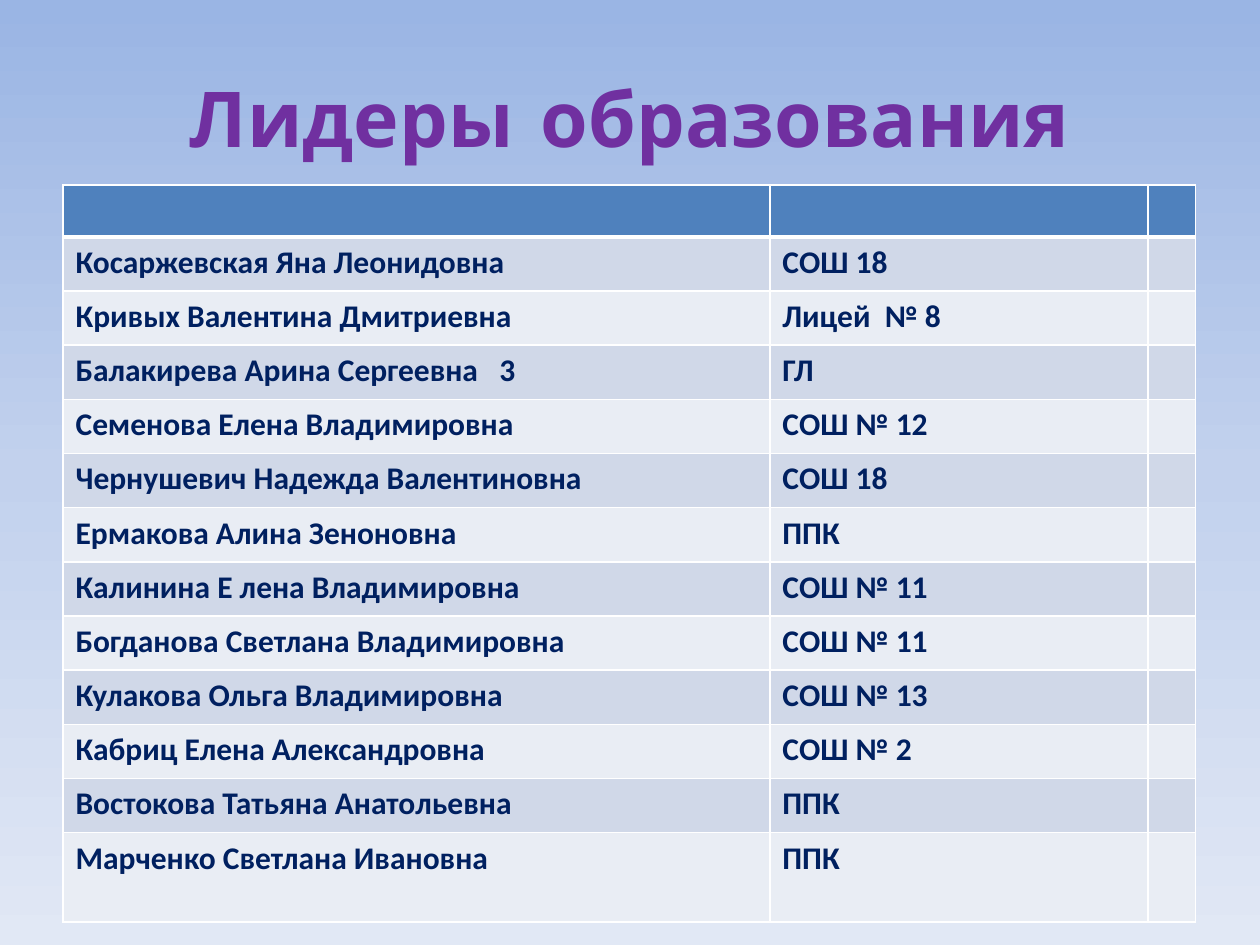
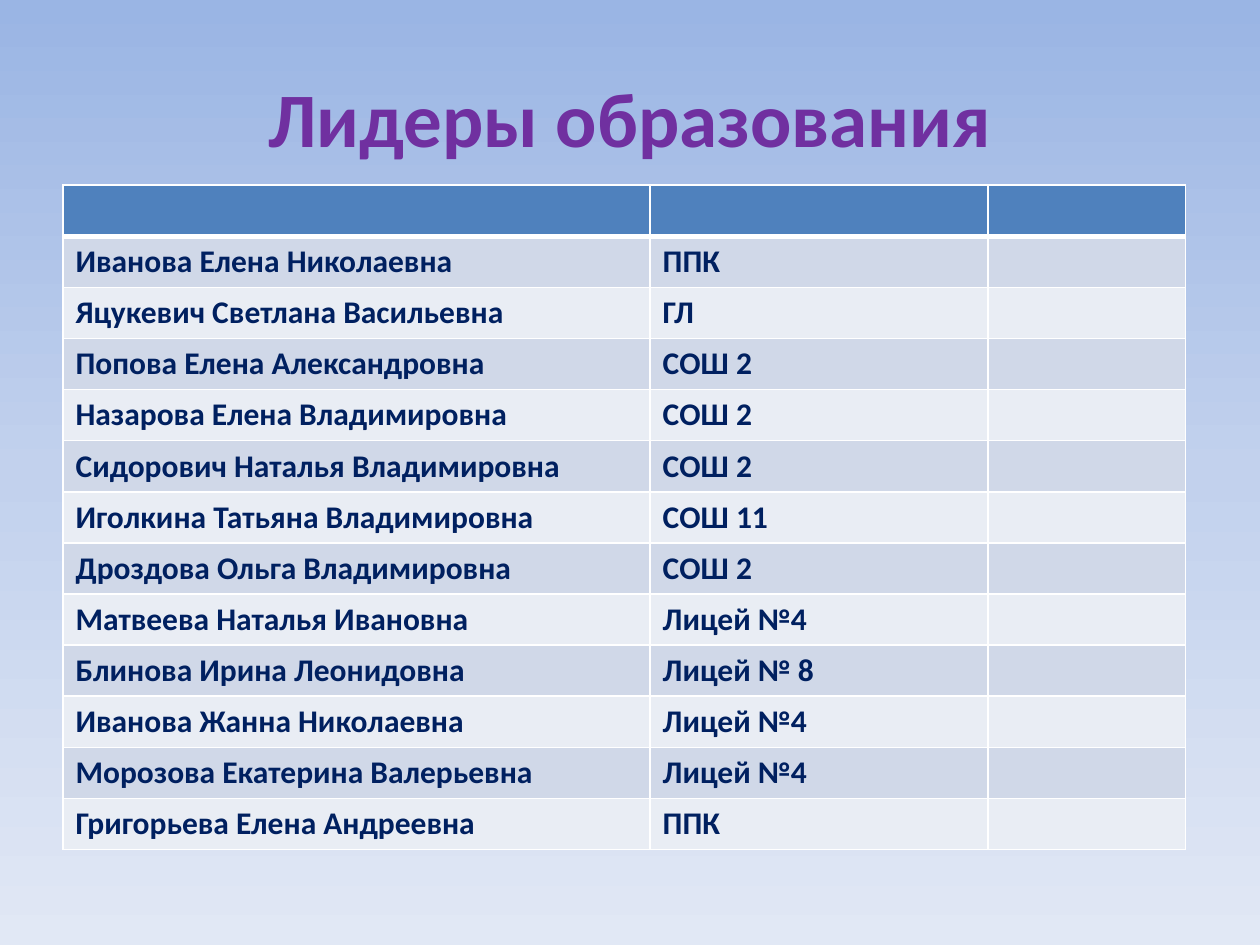
from copy import deepcopy

from lxml.etree import SubElement
from pptx import Presentation
from pptx.dml.color import RGBColor
from pptx.enum.text import MSO_ANCHOR, PP_ALIGN
from pptx.oxml.ns import qn
from pptx.util import Inches, Pt

COLORS = {
    "sky_top": "9AB5E4",
    "sky_middle": "C2D1ED",
    "sky_bottom": "E1E8F5",
    "title": "7030A0",
    "text": "002060",
    "header": "4F81BD",
    "odd_row": "D0D8E8",
    "even_row": "E9EDF4",
    "border": "FFFFFF",
}
TITLE = "Лидеры образования"
TITLE_BOX = (0.5, 0.3, 9, 1.25)
TABLE_LEFT, TABLE_TOP = 0.5, 1.47
TITLE_FORMAT = {"size": Pt(44), "bold": True}
CELL_FORMAT = {"size": Pt(18), "bold": True, "name": "Calibri"}

SLIDES = [
    {
        "title_font": "Comic Neue",
        "columns": [5.61, 3, 0.38],
        "heights": [0.41] + [0.43] * 11 + [0.71],
        "leaders": [
            ("Косаржевская Яна Леонидовна", "СОШ 18"),
            ("Кривых Валентина Дмитриевна", "Лицей  № 8"),
            ("Балакирева Арина Сергеевна   3", "ГЛ"),
            ("Семенова Елена Владимировна", "СОШ № 12"),
            ("Чернушевич Надежда Валентиновна", "СОШ 18"),
            ("Ермакова Алина Зеноновна", "ППК"),
            ("Калинина Е лена Владимировна", "СОШ № 11"),
            ("Богданова Светлана Владимировна", "СОШ № 11"),
            ("Кулакова Ольга Владимировна", "СОШ № 13"),
            ("Кабриц Елена Александровна", "СОШ № 2"),
            ("Востокова Татьяна Анатольевна", "ППК"),
            ("Марченко Светлана Ивановна", "ППК"),
        ],
    },
    {
        "title_font": "Calibri",
        "columns": [4.66, 2.68, 1.57],
        "heights": [5.27 / 13] * 13,
        "leaders": [
            ("Иванова Елена Николаевна", "ППК"),
            ("Яцукевич Светлана Васильевна", "ГЛ"),
            ("Попова Елена Александровна", "СОШ 2"),
            ("Назарова Елена Владимировна", "СОШ 2"),
            ("Сидорович Наталья Владимировна", "СОШ 2"),
            ("Иголкина Татьяна Владимировна", "СОШ 11"),
            ("Дроздова Ольга Владимировна", "СОШ 2"),
            ("Матвеева Наталья Ивановна", "Лицей №4"),
            ("Блинова Ирина Леонидовна", "Лицей № 8"),
            ("Иванова Жанна Николаевна", "Лицей №4"),
            ("Морозова Екатерина Валерьевна", "Лицей №4"),
            ("Григорьева Елена Андреевна", "ППК"),
        ],
    },
]


def rgb(name):
    return RGBColor.from_string(COLORS[name])


def format_font(font, color, values):
    for key, value in values.items():
        setattr(font, key, value)
    font.color.rgb = rgb(color)


def set_background(master):
    fill = master.background.fill
    fill.gradient()
    fill.gradient_angle = 270
    stops = master.element.find(".//" + qn("a:gsLst"))
    stops.append(deepcopy(stops[-1]))
    names = ("sky_top", "sky_middle", "sky_bottom")
    for stop, position, name in zip(fill.gradient_stops, (0, 0.5, 1), names):
        stop.position = position
        stop.color.rgb = rgb(name)


def add_title(s, box, font_name):
    sp = s.shapes.title
    sp.left, sp.top, sp.width, sp.height = map(Inches, box)
    tf = sp.text_frame
    tf.vertical_anchor = MSO_ANCHOR.MIDDLE
    p = tf.paragraphs[0]
    p.alignment = PP_ALIGN.CENTER
    r = p.add_run()
    r.text = TITLE
    format_font(r.font, "title", TITLE_FORMAT | {"name": font_name})


def set_borders(cell, bottom):
    """Draw white 1 pt borders, with the bottom one as wide as given."""
    tcPr = cell._tc.get_or_add_tcPr()
    for side, width in (("L", 1), ("R", 1), ("T", 1), ("B", bottom)):
        ln = SubElement(tcPr, qn(f"a:ln{side}"), w=str(Pt(width)))
        fill = SubElement(ln, qn("a:solidFill"))
        SubElement(fill, qn("a:srgbClr"), val=COLORS["border"])


def format_cell(cell, row, text):
    set_borders(cell, bottom=1 if row else 3)
    name = ("even_row", "odd_row")[row % 2] if row else "header"
    cell.fill.solid()
    cell.fill.fore_color.rgb = rgb(name)
    if text:
        r = cell.text_frame.paragraphs[0].add_run()
        r.text = text
        format_font(r.font, "text", CELL_FORMAT)


def add_leaders_table(s, left, top, columns, heights, leaders):
    box = map(Inches, (left, top, sum(columns), sum(heights)))
    table = s.shapes.add_table(len(heights), len(columns), *box).table
    for column, width in zip(table.columns, columns):
        column.width = Inches(width)
    for row, height in zip(table.rows, heights):
        row.height = Inches(height)
    for i, (leader, school) in enumerate([("", ""), *leaders]):
        for j, text in enumerate((leader, school, "")):
            format_cell(table.cell(i, j), i, text)


def add_leaders_slide(prs, title_font, **table):
    s = prs.slides.add_slide(prs.slide_layouts.get_by_name("Title Only"))
    add_title(s, TITLE_BOX, title_font)
    add_leaders_table(s, TABLE_LEFT, TABLE_TOP, **table)


def main():
    prs = Presentation()
    prs.slide_width, prs.slide_height = Inches(10), Inches(7.5)
    set_background(prs.slide_master)
    for content in SLIDES:
        add_leaders_slide(prs, **content)
    prs.save("out.pptx")


if __name__ == "__main__":
    main()
